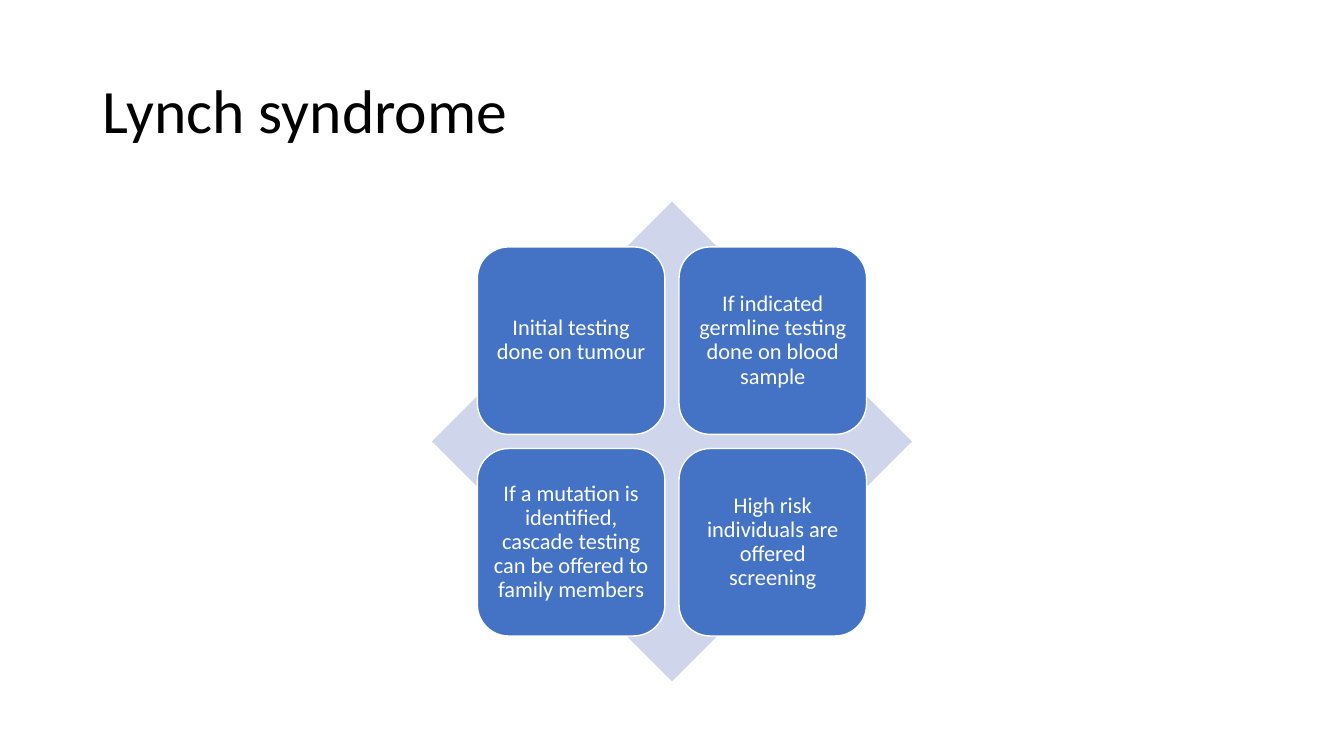
"""Build the Lynch syndrome slide: a title and a two-by-two card matrix on a diamond."""
from dataclasses import dataclass

import pptx
import pptx.dml.color
import pptx.enum.shapes
import pptx.enum.text
import pptx.util

WIDTH, HEIGHT = 13.33, 7.5
FONT = "Calibri"
COLOURS = {"title": "000000", "diamond": "CFD5EA", "card": "4472C4", "light": "FFFFFF"}
DIAMOND = 4.76
CENTRE_X, CENTRE_Y = WIDTH / 2, 4.38
PITCH, CARD = 2.0, 1.86


@dataclass(frozen=True)
class Card:
    col: int
    row: int
    text: str


CARDS = [
    Card(0, 0, "Initial testing done on tumour"),
    Card(1, 0, "If indicated germline testing done on blood sample"),
    Card(0, 1, "If a mutation is identified, cascade testing can be offered to family members"),
    Card(1, 1, "High risk individuals are offered screening"),
]


def rgb(name: str) -> pptx.dml.color.RGBColor:
    return pptx.dml.color.RGBColor.from_string(COLOURS[name])


def write(tf: pptx.text.text.TextFrame, text: str, size: int, colour: str,
          align: pptx.enum.text.PP_ALIGN) -> None:
    tf.text = text
    tf.word_wrap = True
    tf.auto_size = pptx.enum.text.MSO_AUTO_SIZE.NONE
    tf.vertical_anchor = pptx.enum.text.MSO_ANCHOR.MIDDLE
    p = tf.paragraphs[0]
    p.alignment = align
    p.line_spacing = 0.9
    r = p.runs[0]
    r.font.name = FONT
    r.font.size = pptx.util.Pt(size)
    r.font.color.rgb = rgb(colour)


def add_square(group: pptx.shapes.group.GroupShape, kind: pptx.enum.shapes.MSO_SHAPE,
               cx: float, cy: float, side: float, fill: str) -> pptx.shapes.autoshape.Shape:
    sp = group.shapes.add_shape(
        kind, pptx.util.Inches(cx - side / 2), pptx.util.Inches(cy - side / 2),
        pptx.util.Inches(side), pptx.util.Inches(side))
    sp.shadow.inherit = False
    sp.fill.solid()
    sp.fill.fore_color.rgb = rgb(fill)
    sp.line.fill.background()
    return sp


def add_card(group: pptx.shapes.group.GroupShape, card: Card) -> None:
    sp = add_square(group, pptx.enum.shapes.MSO_SHAPE.ROUNDED_RECTANGLE,
                    CENTRE_X + (card.col - 0.5) * PITCH,
                    CENTRE_Y + (card.row - 0.5) * PITCH, CARD, "card")
    sp.line.color.rgb = rgb("light")
    sp.line.width = pptx.util.Pt(1)
    tf = sp.text_frame
    tf.margin_left = tf.margin_right = pptx.util.Inches(0.07)
    tf.margin_top = tf.margin_bottom = pptx.util.Inches(0.07)
    write(tf, card.text, 16, "light", pptx.enum.text.PP_ALIGN.CENTER)


def main() -> None:
    prs = pptx.Presentation()
    prs.slide_width = pptx.util.Inches(WIDTH)
    prs.slide_height = pptx.util.Inches(HEIGHT)
    s = prs.slides.add_slide(prs.slide_layouts.get_by_name("Title Only"))
    title = s.shapes.title
    title.left, title.top = pptx.util.Inches(0.92), pptx.util.Inches(0.4)
    title.width, title.height = pptx.util.Inches(11.5), pptx.util.Inches(1.45)
    write(title.text_frame, "Lynch syndrome", 44, "title", pptx.enum.text.PP_ALIGN.LEFT)

    group = s.shapes.add_group_shape()
    add_square(group, pptx.enum.shapes.MSO_SHAPE.DIAMOND, CENTRE_X, CENTRE_Y, DIAMOND, "diamond")
    for card in CARDS:
        add_card(group, card)
    prs.save("out.pptx")


if __name__ == "__main__":
    main()
